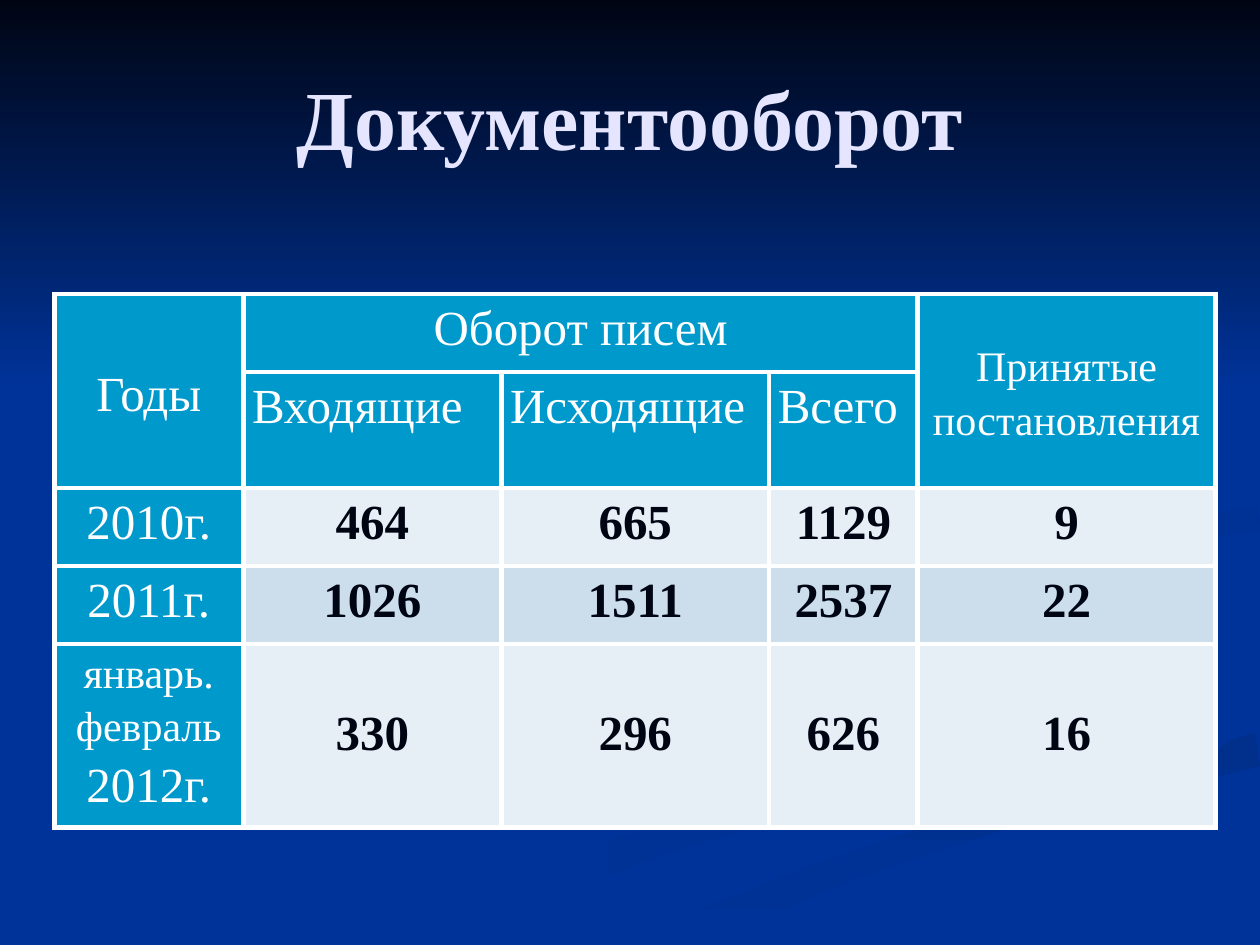
import math
from dataclasses import dataclass

from lxml import etree
from pptx import Presentation
from pptx import util as u
from pptx.dml.color import RGBColor
from pptx.enum import shapes, text
from pptx.oxml import ns

Pt = u.Pt
ALIGN = text.PP_ALIGN
ANCHOR = text.MSO_ANCHOR
WIDTH, HEIGHT = 720, 540


@dataclass(frozen=True)
class Theme:
    font: str = "Times New Roman"
    background: str = "003399"
    night: str = "000514"
    shade: str = "002F8C"
    soft_shade: str = "003193"
    title: str = "E5E5FF"
    header: str = "0099CC"
    white: str = "FFFFFF"
    light_row: str = "E7EFF6"
    dark_row: str = "CCDEEC"
    title_size: int = 48
    cell_size: int = 28
    small_size: int = 24
    border: int = 3
    line_spacing: float = 1.15


def smooth(knots, steps=5):
    padded = [knots[0], *knots, knots[-1]]
    curve = []
    for before, start, end, after in zip(padded, padded[1:], padded[2:], padded[3:]):
        for step in range(steps):
            t = step / steps
            curve.append(tuple(
                b + t / 2 * (c - a + t * (2 * a - 5 * b + 4 * c - d + t * (3 * (b - c) + d - a)))
                for a, b, c, d in zip(before, start, end, after)))
    return curve + [knots[-1]]


def band_edges(knots):
    curve = smooth(knots)
    left, right = [], []
    neighbours = zip([curve[0], *curve], curve, [*curve[1:], curve[-1]])
    for before, (x, y, width), after in neighbours:
        along_x, along_y = after[0] - before[0], after[1] - before[1]
        half = width / 2 / math.hypot(along_x, along_y)
        for edge, side in ((left, half), (right, -half)):
            edge.append((min(x - side * along_y, WIDTH), min(y + side * along_x, HEIGHT)))
    return left + right[::-1]


class Deck:
    def __init__(self, theme):
        self.theme = theme
        self.presentation = Presentation()
        self.presentation.slide_width = Pt(WIDTH)
        self.presentation.slide_height = Pt(HEIGHT)
        self.slide = self.presentation.slides.add_slide(self.presentation.slide_layouts[6])
        self.solid(self.slide.background.fill, theme.background)

    def solid(self, fill, color):
        fill.solid()
        fill.fore_color.rgb = RGBColor.from_string(color)

    def gradient(self, shape, colors, angle):
        shape.shadow.inherit = False
        shape.line.fill.background()
        shape.fill.gradient()
        shape.fill.gradient_angle = 360 - angle
        for stop, color in zip(shape.fill.gradient_stops, colors):
            stop.color.rgb = RGBColor.from_string(color)

    def band(self, knots, colors, angle):
        points = [(Pt(x), Pt(y)) for x, y in band_edges(knots)]
        builder = self.slide.shapes.build_freeform(*points[0])
        builder.add_line_segments(points[1:], close=True)
        self.gradient(builder.convert_to_shape(), colors, angle)

    def sky(self, height):
        shape = self.slide.shapes.add_shape(shapes.MSO_SHAPE.RECTANGLE, 0, 0,
                                            Pt(WIDTH), Pt(height))
        self.gradient(shape, (self.theme.night, self.theme.background), 90)

    def run(self, paragraph, words, size, color, bold=False):
        run = paragraph.add_run()
        run.text = words
        run.font.name = self.theme.font
        run.font.size = Pt(size)
        run.font.bold = bold
        run.font.color.rgb = RGBColor.from_string(color)

    def title(self, words, left, top, width, height):
        box = self.slide.shapes.add_textbox(Pt(left), Pt(top), Pt(width), Pt(height))
        frame = box.text_frame
        frame.word_wrap = True
        frame.vertical_anchor = ANCHOR.MIDDLE
        paragraph = frame.paragraphs[0]
        paragraph.alignment = ALIGN.CENTER
        self.run(paragraph, words, self.theme.title_size, self.theme.title, True)

    def table(self, left, top, height, columns, rows):
        frame = self.slide.shapes.add_table(len(rows), len(columns), Pt(left), Pt(top),
                                            Pt(sum(columns)), Pt(height))
        table = frame.table
        for column, width in zip(table.columns, columns):
            column.width = Pt(width)
        for row, row_height in zip(table.rows, rows):
            row.height = Pt(row_height)
        frame.height = Pt(height)
        for cell in table.iter_cells():
            self.borders(cell)
        return table

    def borders(self, cell):
        properties = cell._tc.get_or_add_tcPr()
        for index, side in enumerate(("lnL", "lnR", "lnT", "lnB")):
            line = etree.Element(ns.qn(f"a:{side}"), w=str(Pt(self.theme.border)))
            fill = etree.SubElement(line, ns.qn("a:solidFill"))
            etree.SubElement(fill, ns.qn("a:srgbClr"), val=self.theme.white)
            properties.insert(index, line)

    def cell(self, cell, lines, fill, color, bold=False, align=ALIGN.CENTER,
             anchor=ANCHOR.TOP, margin_top=0):
        self.solid(cell.fill, fill)
        cell.margin_left = cell.margin_right = Pt(5)
        cell.margin_top, cell.margin_bottom = Pt(margin_top), Pt(0)
        cell.vertical_anchor = anchor
        frame = cell.text_frame
        for index, (words, size) in enumerate(lines):
            paragraph = frame.add_paragraph() if index else frame.paragraphs[0]
            paragraph.alignment = align
            paragraph.line_spacing = self.theme.line_spacing
            self.run(paragraph, words, size, color, bold)


def draw_background(deck):
    base, shade, soft = deck.theme.background, deck.theme.shade, deck.theme.soft_shade
    left_ribbon = [(412, 332, 3), (440, 358, 3), (500, 376, 3), (560, 397, 4),
                   (570, 414, 9), (510, 443, 13), (359, 486, 18), (238, 537, 28)]
    right_curl = [(521, 336, 2), (545, 362, 4), (600, 380, 8), (652, 397, 14),
                  (670, 414, 14), (650, 434, 3)]
    streak = [(720, 428, 20), (650, 447, 14), (580, 465, 14), (500, 490, 15),
              (460, 505, 17), (420, 523, 20), (386, 539, 38)]
    wide_ribbon = [(720, 284, 10), (629, 299, 10), (542, 330, 38), (575, 358, 18),
                   (640, 378, 22), (695, 405, 30), (660, 434, 16), (550, 462, 8),
                   (413, 509, 9), (352, 539, 16)]
    right_fold = [(720, 296, 13), (645, 308, 14), (590, 320, 18), (571, 333, 18),
                  (590, 354, 4)]
    upper_curl = [(549, 168, 1), (607, 199, 3), (642, 240, 4), (618, 274, 12),
                  (549, 293, 14), (470, 309, 14), (422, 330, 12), (448, 360, 1)]
    for knots, colors, angle in ((left_ribbon, (base, soft), 0),
                                 (right_curl, (base, soft), 45),
                                 (streak, (shade, base), 90),
                                 (wide_ribbon, (base, base), 0),
                                 (right_fold, (shade, base), 45),
                                 (upper_curl, (shade, base), 45)):
        deck.band(knots, colors, angle)
    deck.sky(222)


def draw_table(deck):
    theme = deck.theme
    large, small = theme.cell_size, theme.small_size
    table = deck.table(31, 168, 286.6, (108, 147.5, 153, 85, 170), (44.6, 47.5, 44.6, 44.6, 44.6))
    for first, last in (((0, 0), (1, 0)), ((0, 1), (0, 3)), ((0, 4), (1, 4))):
        table.cell(*first).merge(table.cell(*last))

    for column, words, size, anchor in ((0, "Годы", large, ANCHOR.MIDDLE),
                                        (1, "Оборот писем", large, ANCHOR.TOP),
                                        (4, "Принятые постановления", small, ANCHOR.MIDDLE)):
        deck.cell(table.cell(0, column), [(words, size)], theme.header, theme.white, anchor=anchor)
    for column, words in enumerate(("Входящие", "Исходящие", "Всего"), 1):
        deck.cell(table.cell(1, column), [(words, large)], theme.header, theme.white,
                  align=ALIGN.JUSTIFY)

    years = (
        ([("2010г.", large)], (464, 665, 1129, 9), theme.light_row, 0),
        ([("2011г.", large)], (1026, 1511, 2537, 22), theme.dark_row, 0),
        ([("январь.", small), ("февраль", small), ("2012г.", large)],
         (330, 296, 626, 16), theme.light_row, 31))
    for row, (label, values, fill, margin_top) in enumerate(years, 2):
        deck.cell(table.cell(row, 0), label, theme.header, theme.white)
        for column, value in enumerate(values, 1):
            deck.cell(table.cell(row, column), [(str(value), large)], fill, theme.night,
                      bold=True, margin_top=margin_top)


def main():
    deck = Deck(Theme())
    draw_background(deck)
    deck.title("Документооборот", 36, 21.6, 648, 90)
    draw_table(deck)
    deck.presentation.save("out.pptx")


if __name__ == "__main__":
    main()
